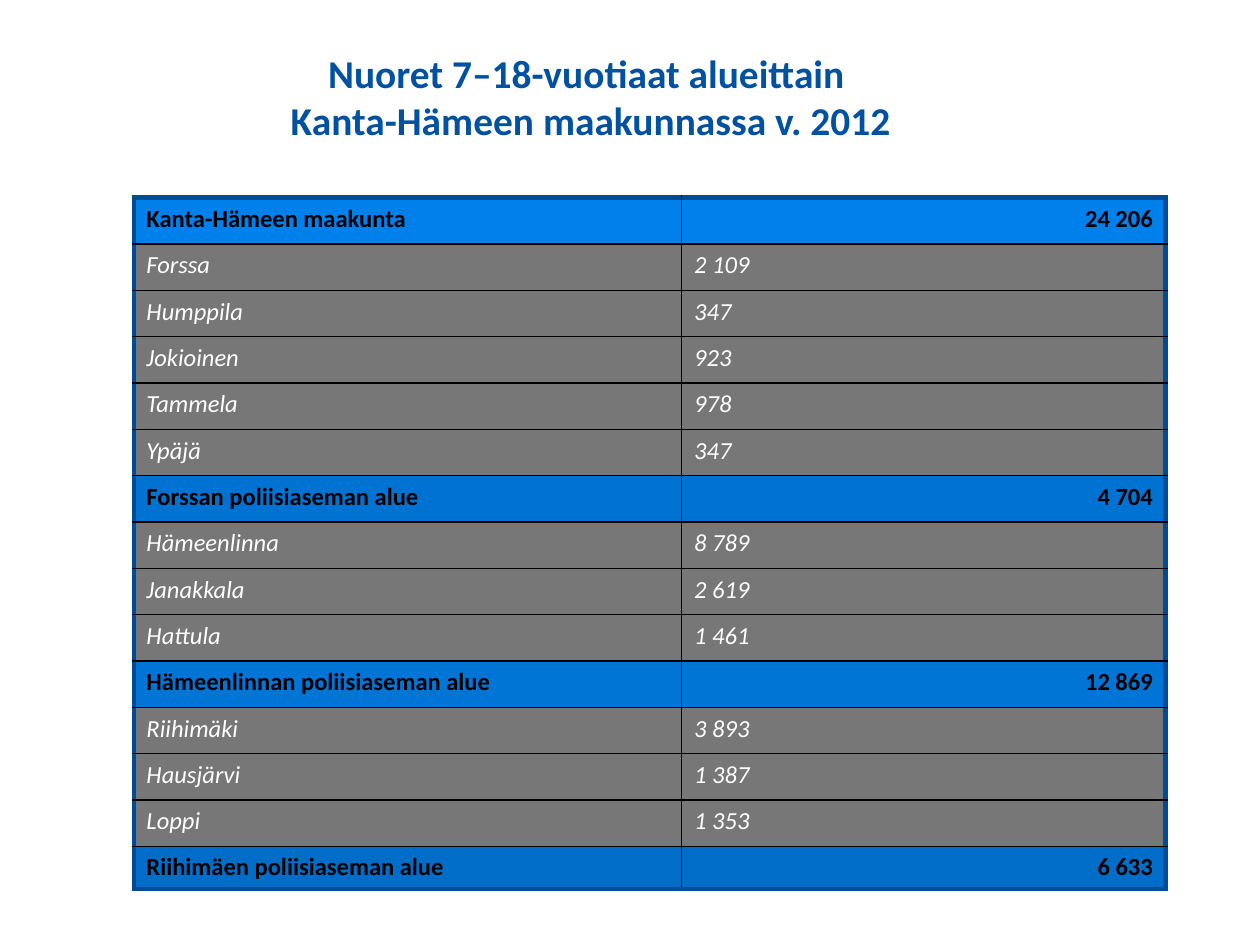
from lxml import etree
from pptx import Presentation
from pptx import util as u
from pptx.dml import color
from pptx.enum import text
from pptx.oxml import ns

COLORS = {
    "title": "0051A2", "frame": "004B96", "black": "000000", "white": "FFFFFF",
    "town": "777777", "province": "0080EA", "forssa": "0073D2",
    "hameenlinna": "0075D6", "riihimaki": "006EC8",
}
ROWS = [
    ("Kanta-Hämeen maakunta", "24 206", "province"),
    ("Forssa", "2 109", "town"),
    ("Humppila", "347", "town"),
    ("Jokioinen", "923", "town"),
    ("Tammela", "978", "town"),
    ("Ypäjä", "347", "town"),
    ("Forssan poliisiaseman alue", "4 704", "forssa"),
    ("Hämeenlinna", "8 789", "town"),
    ("Janakkala", "2 619", "town"),
    ("Hattula", "1 461", "town"),
    ("Hämeenlinnan poliisiaseman alue", "12 869", "hameenlinna"),
    ("Riihimäki", "3 893", "town"),
    ("Hausjärvi", "1 387", "town"),
    ("Loppi", "1 353", "town"),
    ("Riihimäen poliisiaseman alue", "6 633", "riihimaki"),
]


class SlideBuilder:
    font_name = "Calibri"

    def __init__(self, deck):
        self.page = deck.slides.add_slide(deck.slide_layouts[5])

    def format_font(self, font, color_name, **values):
        values["name"] = self.font_name
        for name, value in values.items():
            setattr(font, name, value)
        font.color.rgb = color.RGBColor.from_string(COLORS[color_name])

    def title(self, wording, left, top, width, height):
        box = self.page.shapes.title
        places = {"left": left, "top": top, "width": width, "height": height}
        for name, value in places.items():
            setattr(box, name, u.Pt(value))
        frame = box.text_frame
        frame.text = wording
        frame.word_wrap = True
        frame.auto_size = text.MSO_AUTO_SIZE.NONE
        frame.vertical_anchor = text.MSO_ANCHOR.BOTTOM
        para = frame.paragraphs[0]
        para.alignment = text.PP_ALIGN.CENTER
        for span in para.runs:
            self.format_font(span.font, "title", size=u.Pt(22.5), bold=True)

    def borders(self, cell, outer_sides):
        properties = cell._tc.get_or_add_tcPr()
        for side in "LRTB":
            outer = side in outer_sides
            line = etree.SubElement(properties, ns.qn(f"a:ln{side}"),
                                    w=str(u.Pt(3 if outer else 1)))
            fill = etree.SubElement(line, ns.qn("a:solidFill"))
            etree.SubElement(fill, ns.qn("a:srgbClr"),
                             val=COLORS["frame" if outer else "black"])

    def cell(self, cell, wording, fill_name, outer_sides, is_value):
        self.borders(cell, outer_sides)
        cell.fill.solid()
        cell.fill.fore_color.rgb = color.RGBColor.from_string(COLORS[fill_name])
        cell.text = wording
        total = fill_name != "town"
        para = cell.text_frame.paragraphs[0]
        align = text.PP_ALIGN
        para.alignment = align.RIGHT if total and is_value else align.LEFT
        self.format_font(para.runs[0].font, "black" if total else "white",
                         size=u.Pt(14), bold=total, italic=not total)

    def table(self, rows, left, top, widths, row_height, last_height):
        height = row_height * (len(rows) - 1) + last_height
        places = [u.Pt(value) for value in (left, top, sum(widths), height)]
        table = self.page.shapes.add_table(len(rows), len(widths), *places).table
        table.first_row = table.horz_banding = False
        for column, width in zip(table.columns, widths):
            column.width = u.Pt(width)
        last = len(rows) - 1
        for index, (*wordings, fill_name) in enumerate(rows):
            table.rows[index].height = u.Pt(last_height if index == last else row_height)
            ends = ("T" if index == 0 else "") + ("B" if index == last else "")
            for column, wording in enumerate(wordings):
                self.cell(table.cell(index, column), wording, fill_name,
                          "LR"[column] + ends, column == 1)


def main():
    deck = Presentation()
    deck.slide_width, deck.slide_height = u.Pt(720), u.Pt(540)
    builder = SlideBuilder(deck)
    builder.title("Nuoret 7–18-vuotiaat alueittain \vKanta-Hämeen maakunnassa v. 2012",
                  36.75, 37.5, 602, 48)
    builder.table(ROWS, 76.5, 113, [313, 276.5], 26.5, 24.3)
    deck.save("out.pptx")


if __name__ == "__main__":
    main()
